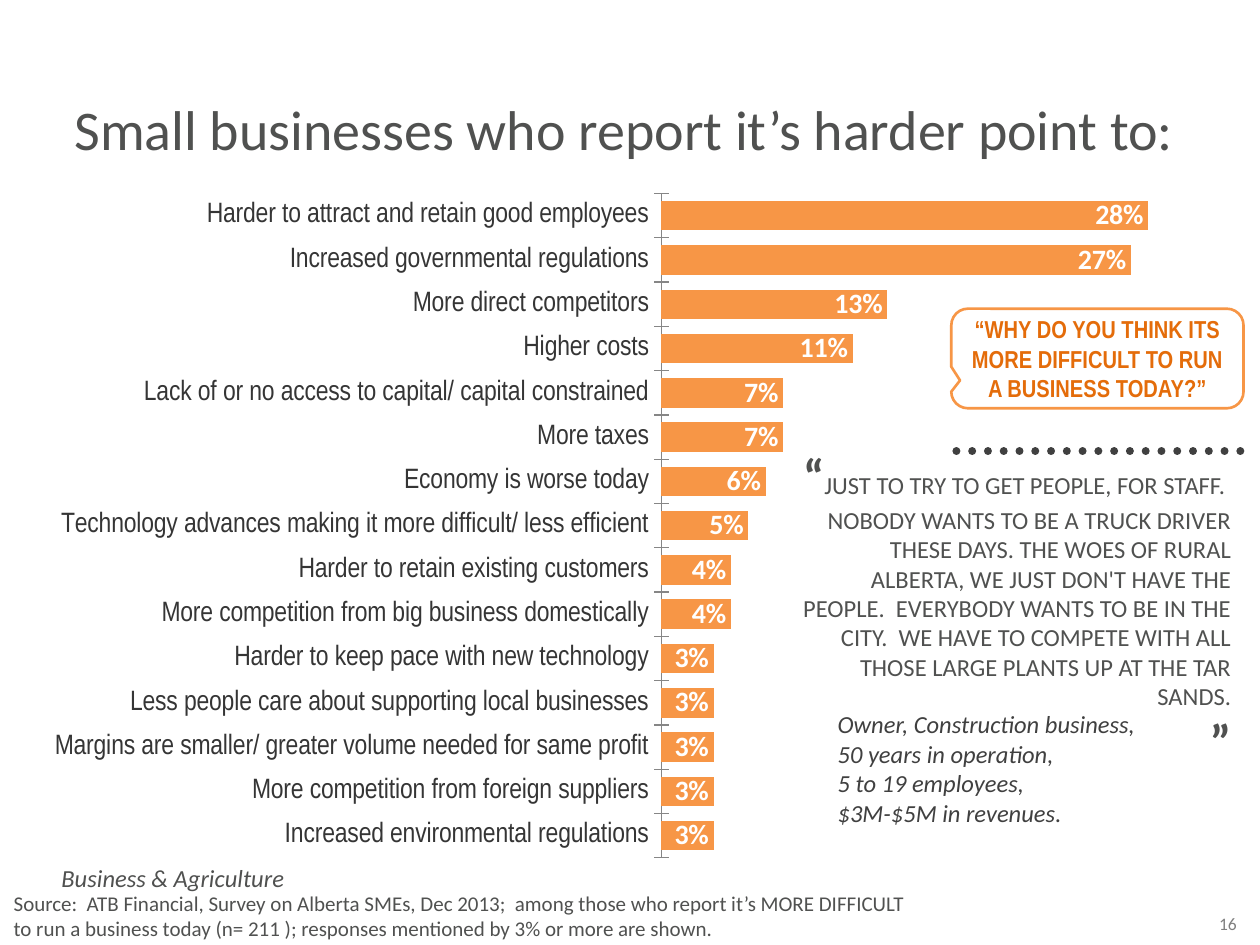
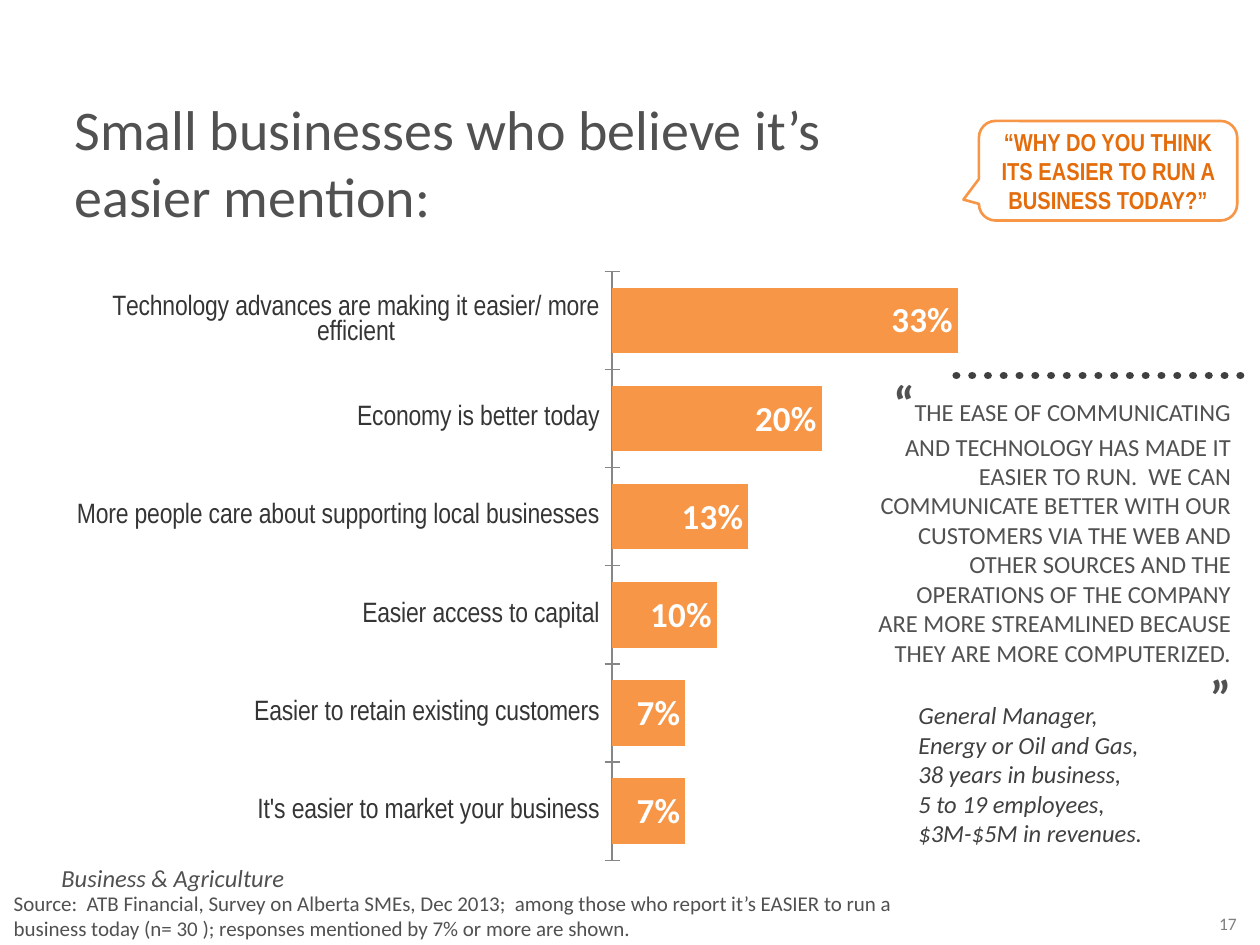
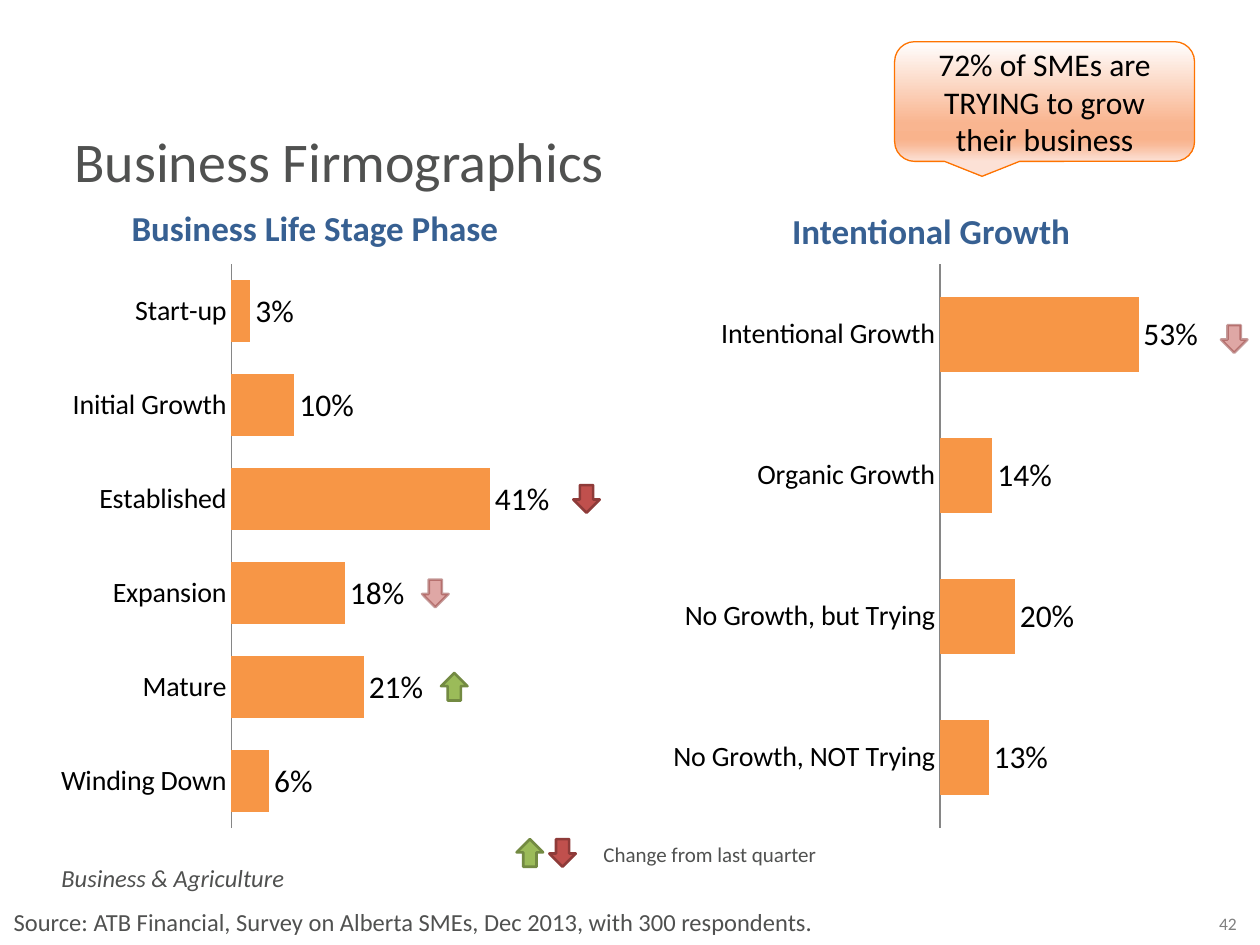
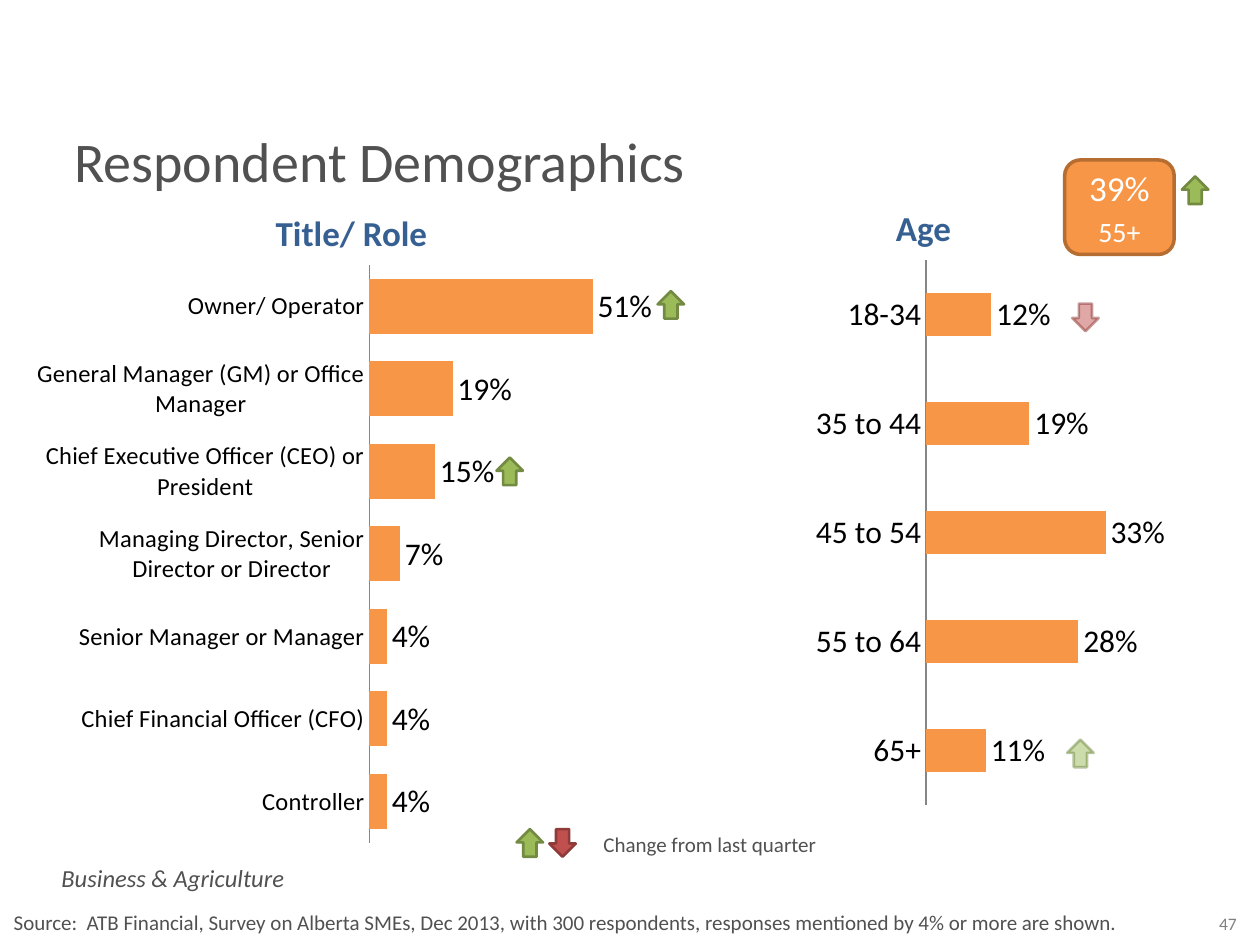
"""Build four survey slides on small business conditions and respondents."""
from lxml.etree import SubElement
from pptx import Presentation
from pptx.chart.data import CategoryChartData as ChartData
from pptx.dml.color import RGBColor
from pptx.enum.chart import XL_CHART_TYPE as ChartType
from pptx.enum.chart import XL_LABEL_POSITION as LabelPos
from pptx.enum.chart import XL_TICK_MARK as Tick
from pptx.enum.dml import MSO_LINE
from pptx.enum.shapes import MSO_CONNECTOR, MSO_SHAPE
from pptx.enum.text import MSO_ANCHOR as Anchor
from pptx.enum.text import MSO_AUTO_SIZE as AutoSize
from pptx.enum.text import PP_ALIGN as Align
from pptx.oxml.ns import qn
from pptx.util import Pt


class Theme:
    """Colours and text styles shared by all slides."""
    orange, orange_dark, callout_line = "F79646", "B66D31", "FE7300"
    grey, dots, axis = "505150", "404040", "868686"
    up, down = ("9BBB59", "738A42"), ("C0504D", "8E3B39")
    glow = ((0, "FFFEFE"), (68, "F9B590"), (81, "F9B38C"), (86, "F9BA99"), (100, "FCE1D6"))
    base = dict(name="Calibri", bold=False, italic=False)
    narrow = base | dict(name="Arial Narrow")
    title = base | dict(size=32, color=grey)
    heading = base | dict(size=20, color="376092", bold=True)
    section = base | dict(size=14, color=grey, italic=True)
    page = base | dict(size=10, color="808080")
    source = base | dict(size=12, color=grey)
    source_large = source | dict(size=14)
    quote = base | dict(size=14, color=grey)
    quote_mark = quote | dict(size=28, bold=True)
    respondent = base | dict(size=14, color=dots, italic=True)
    question = narrow | dict(size=14, color="E46C0A", bold=True)
    finding = base | dict(size=18, color="000000")
    badge = base | dict(size=20, color="FFFFFF")
    badge_small = badge | dict(size=16)
    reason = narrow | dict(size=16, color="353535")
    share = base | dict(size=16, color="FFFFFF", bold=True)
    share_large = share | dict(size=20)
    category = base | dict(size=16, color="000000")
    category_small = category | dict(size=14)


def rgb(code):
    """Return the colour of a hex code."""
    return RGBColor.from_string(code)


def apply(target, values):
    """Set each attribute of target named in values."""
    for name, value in values.items():
        setattr(target, name, value)


def style_font(font, style):
    """Give a font a text style of the theme."""
    apply(font, {key: value for key, value in style.items() if key not in ("size", "color")})
    font.size = Pt(style["size"])
    font.color.rgb = rgb(style["color"])


class Deck:
    """Holds the theme and the current slide and draws each kind of element."""

    def __init__(self, theme):
        """Start an empty presentation."""
        self.theme = theme
        self.prs = Presentation()
        apply(self.prs, dict(slide_width=Pt(720), slide_height=Pt(540)))

    def start(self, number, title, box, source, source_box, source_style):
        """Add a slide with its title, section, source and page number."""
        self.slide = self.prs.slides.add_slide(self.prs.slide_layouts[5])
        heading = self.slide.shapes.title
        apply(heading, dict(zip(("left", "top", "width", "height"), map(Pt, box))))
        self.fill_text(heading, [[(title, self.theme.title)]])
        self.text((684, 518.4, 35.3, 19.4), str(number), self.theme.page, Align.CENTER)
        self.text((28, 489.6, 202.3, 24.5), "Business & Agriculture", self.theme.section)
        self.text(source_box, source, source_style)

    def fill_text(self, shape, paragraphs, align=Align.LEFT, anchor=Anchor.TOP):
        """Fill a shape with paragraphs made of (text, style) runs."""
        frame = shape.text_frame
        apply(frame, dict(word_wrap=True, auto_size=AutoSize.NONE, vertical_anchor=anchor))
        for index, runs in enumerate(paragraphs):
            paragraph = frame.add_paragraph() if index else frame.paragraphs[0]
            paragraph.alignment = align
            for words, style in runs:
                run = paragraph.add_run()
                run.text = words
                style_font(run.font, style)

    def text(self, box, words, style, align=Align.LEFT):
        """Add a text box with one paragraph per line of words."""
        holder = self.slide.shapes.add_textbox(*map(Pt, box))
        self.fill_text(holder, [[(line, style)] for line in words.split("\n")], align)

    def quote(self, box, words):
        """Add a right-aligned quotation between large quote marks."""
        mark = self.theme.quote_mark
        holder = self.slide.shapes.add_textbox(*map(Pt, box))
        self.fill_text(holder, [[("“", mark), (words, self.theme.quote)], [("”", mark)]],
                       Align.RIGHT)

    def shape(self, kind, box, fill, line, weight):
        """Add a preset shape, unfilled if fill is None."""
        shape = self.slide.shapes.add_shape(kind, *map(Pt, box))
        shape.shadow.inherit = False
        if fill:
            shape.fill.solid()
            shape.fill.fore_color.rgb = rgb(fill)
        else:
            shape.fill.background()
        shape.line.color.rgb = rgb(line)
        shape.line.width = Pt(weight)
        return shape

    def question(self, box, words, tail):
        """Add an outlined speech bubble with its tail at the given offsets."""
        bubble = self.shape(MSO_SHAPE.ROUNDED_RECTANGULAR_CALLOUT, box, None, self.theme.orange, 1.5)
        bubble.adjustments[0], bubble.adjustments[1] = tail
        self.fill_text(bubble, [[(words, self.theme.question)]], Align.CENTER, Anchor.MIDDLE)

    def finding(self, box, words):
        """Add a speech bubble with a vertical gradient."""
        theme = self.theme
        bubble = self.shape(MSO_SHAPE.ROUNDED_RECTANGULAR_CALLOUT, box, None, theme.callout_line, 0.75)
        bubble.fill.gradient()
        bubble.fill.gradient_angle = 270
        stops = bubble._element.spPr.find(qn("a:gradFill")).find(qn("a:gsLst"))
        for stop in list(stops):
            stops.remove(stop)
        for percent, color in theme.glow:
            stop = SubElement(stops, qn("a:gs"), pos=str(percent * 1000))
            SubElement(stop, qn("a:srgbClr"), val=color)
        self.fill_text(bubble, [[(words, theme.finding)]], Align.CENTER, Anchor.MIDDLE)

    def badge(self, box, value, group):
        """Add a filled badge with a value over its group."""
        theme = self.theme
        badge = self.shape(MSO_SHAPE.ROUNDED_RECTANGLE, box, theme.orange, theme.orange_dark, 2)
        self.fill_text(badge, [[(value, theme.badge)], [(group, theme.badge_small)]],
                       Align.CENTER, Anchor.MIDDLE)
        badge.text_frame.paragraphs[1].space_before = Pt(3.2)

    def trend(self, left, top, rising, faded=False):
        """Add a small arrow for a rise or fall."""
        fill, line = self.theme.up if rising else self.theme.down
        arrow = self.shape(MSO_SHAPE.DOWN_ARROW, (left, top, 15.1, 15.8), fill, line, 1.5)
        arrow.rotation = 180 if rising else 0
        if faded:
            for color in arrow._element.spPr.iter(qn("a:srgbClr")):
                SubElement(color, qn("a:alpha"), val="50000")

    def trend_key(self, top):
        """Add the key to the trend arrows."""
        self.trend(295.2, top, True)
        self.trend(313.9, top, False)
        self.text((337.7, top - 2.1, 173.5, 22.3), "Change from last quarter", self.theme.source)

    def dotted_rule(self, top):
        """Add the round-dotted rule above a quotation."""
        rule = self.slide.shapes.add_connector(
            MSO_CONNECTOR.STRAIGHT, *map(Pt, (546.5, top, 709.9, top)))
        rule.line.color.rgb = rgb(self.theme.dots)
        apply(rule.line, dict(width=Pt(4.5), dash_style=MSO_LINE.ROUND_DOT))
        rule.line._get_or_add_ln().set("cap", "rnd")
        SubElement(rule._element.spPr, qn("a:effectLst"))

    def bars(self, box, shares, plot, top_value, category, label, gap=50, stacked=False):
        """Add a bar chart of percentages, listed from top to bottom."""
        rows = list(shares.items())
        if stacked:
            rows.reverse()
        data = ChartData(number_format="0%")
        data.categories = [name for name, _ in rows]
        data.add_series("Series 1", [percent / 100 for _, percent in rows])
        kind = ChartType.BAR_STACKED if stacked else ChartType.BAR_CLUSTERED
        chart = self.slide.shapes.add_chart(kind, *map(Pt, box), data).chart
        apply(chart, dict(has_legend=False, has_title=False))
        style_font(chart.font, category)

        names, values = chart.category_axis, chart.value_axis
        apply(names, dict(reverse_order=not stacked, has_major_gridlines=False,
                          major_tick_mark=Tick.CROSS if stacked else Tick.NONE,
                          minor_tick_mark=Tick.NONE))
        style_font(names.tick_labels.font, category)
        names.format.line.color.rgb = rgb(self.theme.axis)
        apply(values, dict(visible=False, has_major_gridlines=False,
                           minimum_scale=0, maximum_scale=top_value))

        bars = chart.plots[0]
        apply(bars, dict(gap_width=gap, vary_by_categories=False, has_data_labels=True))
        if stacked:
            bars.overlap = 100
        apply(bars.data_labels, dict(
            show_value=True, number_format="0%", number_format_is_linked=False,
            position=LabelPos.INSIDE_END if stacked else LabelPos.OUTSIDE_END))
        style_font(bars.data_labels.font, label)
        bars.series[0].format.fill.solid()
        bars.series[0].format.fill.fore_color.rgb = rgb(self.theme.orange)
        self.place_plot(chart, plot)

    def place_plot(self, chart, plot):
        """Fix the inner plot area as fractions of the chart."""
        area = chart._chartSpace.chart.plotArea
        layout = area.find(qn("c:layout"))
        if layout is None:
            layout = SubElement(area, qn("c:layout"))
            area.insert(0, layout)
        manual = SubElement(layout, qn("c:manualLayout"))
        settings = dict(layoutTarget="inner", xMode="edge", yMode="edge")
        for tag, value in (settings | dict(zip("xywh", plot))).items():
            SubElement(manual, qn("c:" + tag), val=str(value))


HARDER = {
    "Harder to attract and retain good employees": 28,
    "Increased governmental regulations": 27,
    "More direct competitors": 13,
    "Higher costs": 11,
    "Lack of or no access to capital/ capital constrained": 7,
    "More taxes": 7,
    "Economy is worse today": 6,
    "Technology advances making it more difficult/ less efficient": 5,
    "Harder to retain existing customers": 4,
    "More competition from big business domestically": 4,
    "Harder to keep pace with new technology": 3,
    "Less people care about supporting local businesses": 3,
    "Margins are smaller/ greater volume needed for same profit": 3,
    "More competition from foreign suppliers": 3,
    "Increased environmental regulations": 3,
}
EASIER = {
    "Technology advances are making it easier/ more efficient": 33,
    "Economy is better today": 20,
    "More people care about supporting local businesses": 13,
    "Easier access to capital": 10,
    "Easier to retain existing customers": 7,
    "It's easier to market your business": 7,
}
LIFE_STAGE = {"Start-up": 3, "Initial Growth": 10, "Established": 41,
              "Expansion": 18, "Mature": 21, "Winding Down": 6}
GROWTH = {"Intentional Growth": 53, "Organic Growth": 14,
          "No Growth, but Trying": 20, "No Growth, NOT Trying": 13}
ROLE = {
    "Owner/ Operator": 51,
    "General Manager (GM) or Office Manager": 19,
    "Chief Executive Officer (CEO) or President": 15,
    "Managing Director, Senior Director or Director": 7,
    "Senior Manager or Manager": 4,
    "Chief Financial Officer (CFO)": 4,
    "Controller": 4,
}
AGE = {"18-34": 12, "35 to 44": 19, "45 to 54": 33, "55 to 64": 28, "65+": 11}

REASON_PLOT = (0.6, 0.05, 0.4, 0.92)
HALF_PLOT = (0.5, 0, 0.5, 0.96)
SURVEY = "ATB Financial, Survey on Alberta SMEs, Dec 2013"
REASON_SOURCE = (0.7, 505.4, 531.4, 36)


def harder_slide(deck):
    """Reasons why running a business is harder."""
    theme = deck.theme
    deck.start(16, "Small businesses who report it’s harder point to:", (35.3, 50.4, 675.4, 46.1),
               f"Source:  {SURVEY};  among those who report it’s MORE DIFFICULT to run a business "
               "today (n= 211 ); responses mentioned by 3% or more are shown.",
               REASON_SOURCE, theme.source)
    deck.quote((450.7, 251.3, 259.9, 193.7),
               "JUST TO TRY TO GET PEOPLE, FOR STAFF.  NOBODY WANTS TO BE A TRUCK DRIVER THESE "
               "DAYS. THE WOES OF RURAL ALBERTA, WE JUST DON'T HAVE THE PEOPLE.  EVERYBODY WANTS "
               "TO BE IN THE CITY.  WE HAVE TO COMPETE WITH ALL THOSE LARGE PLANTS UP AT THE TAR "
               "SANDS.")
    deck.bars((-69.1, 90, 745.2, 412.6), HARDER, REASON_PLOT, 0.3,
              theme.reason, theme.share, stacked=True)
    deck.dotted_rule(257.8)
    deck.text((471.6, 401.8, 196.6, 74.9),
              "Owner, Construction business,\n50 years in operation,\n5 to 19 employees,\n"
              "$3M-$5M in revenues.", theme.respondent)
    deck.question((543.6, 176.4, 167, 56.9),
                  "“WHY DO YOU THINK ITS MORE DIFFICULT TO RUN A BUSINESS TODAY?”", (-0.47, 0.22))


def easier_slide(deck):
    """Reasons why running a business is easier."""
    theme = deck.theme
    deck.start(17, "Small businesses who believe it’s easier mention:", (35.3, 50.4, 458.6, 86.4),
               f"Source:  {SURVEY};  among those who report it’s EASIER to run a business today "
               "(n= 30 ); responses mentioned by 7% or more are shown.",
               REASON_SOURCE, theme.source)
    deck.bars((35.3, 136.8, 524.2, 365.8), EASIER, REASON_PLOT, 0.35,
              theme.reason, theme.share_large, stacked=True)
    deck.dotted_rule(214.6)
    deck.quote((493.9, 209.5, 216.7, 227.5),
               "THE EASE OF COMMUNICATING AND TECHNOLOGY HAS MADE IT EASIER TO RUN.  WE CAN "
               "COMMUNICATE BETTER WITH OUR CUSTOMERS VIA THE WEB AND OTHER SOURCES AND THE "
               "OPERATIONS OF THE COMPANY ARE MORE STREAMLINED BECAUSE THEY ARE MORE COMPUTERIZED.")
    deck.text((517.7, 396.7, 157, 92.2),
              "General Manager,\nEnergy or Oil and Gas,\n38 years in business,\n"
              "5 to 19 employees,\n$3M-$5M in revenues.", theme.respondent)
    deck.question((559.4, 69.1, 147.6, 56.9),
                  "“WHY DO YOU THINK ITS EASIER TO RUN A BUSINESS TODAY?”", (-0.56, 0.29))


def firmographics_slide(deck):
    """Life stage and growth of the businesses."""
    theme = deck.theme
    deck.start(42, "Business Firmographics", (35.3, 68.4, 420.5, 46.1),
               f"Source: {SURVEY}, with 300 respondents.",
               (0.7, 514.8, 510.5, 24.5), theme.source_large)
    deck.text((54, 114.5, 252, 31), "Business Life Stage Phase", theme.heading, Align.CENTER)
    deck.text((439.9, 115.9, 184.3, 31.7), "Intentional Growth", theme.heading, Align.CENTER)
    deck.bars((-51.8, 150.5, 418.3, 336.2), LIFE_STAGE, (0.44, 0, 0.56, 0.96), 0.65,
              theme.category, theme.finding)
    deck.bars((376.6, 150.5, 321.1, 336.2), GROWTH, HALF_PLOT, 0.75,
              theme.category, theme.finding, gap=90)
    deck.finding((511.2, 23.8, 171.4, 68.4), "72% of SMEs are TRYING to grow their business")
    deck.trend_key(479.5)
    for left, top, rising, faded in ((697.7, 185.8, False, True), (252, 384.5, True, False),
                                     (327.6, 277.2, False, False), (241.2, 331.2, False, True)):
        deck.trend(left, top, rising, faded)


def demographics_slide(deck):
    """Role and age of the respondents."""
    theme = deck.theme
    deck.start(47, "Respondent Demographics", (35.3, 68.4, 420.5, 46.1),
               f"Source:  {SURVEY}, with 300 respondents, responses mentioned by 4% or more "
               "are shown.", (0.7, 516.2, 719.3, 21.6), theme.source)
    deck.bars((20.2, 151.2, 353.5, 344.2), ROLE, (0.54, 0, 0.46, 0.96), 0.65,
              theme.category_small, theme.finding)
    deck.bars((373.7, 148.3, 311, 324.7), AGE, HALF_PLOT, 0.5,
              theme.finding, theme.finding, gap=150)
    deck.badge((608.4, 91.4, 62.6, 54), "39%", "55+")
    deck.text((120.2, 117.4, 161.3, 31.7), "Title/ Role", theme.heading, Align.CENTER)
    deck.text((447.1, 114.5, 161.3, 31.7), "Age", theme.heading, Align.CENTER)
    deck.trend_key(473.8)
    for left, top, rising, faded in ((609.8, 422.6, True, True), (612.7, 173.5, False, True),
                                     (375.8, 166.3, True, False), (675.4, 100.8, True, False),
                                     (283.7, 261.4, True, False)):
        deck.trend(left, top, rising, faded)


def main():
    """Build and save the slides."""
    deck = Deck(Theme)
    for build in (harder_slide, easier_slide, firmographics_slide, demographics_slide):
        build(deck)
    deck.prs.save("out.pptx")


if __name__ == "__main__":
    main()
